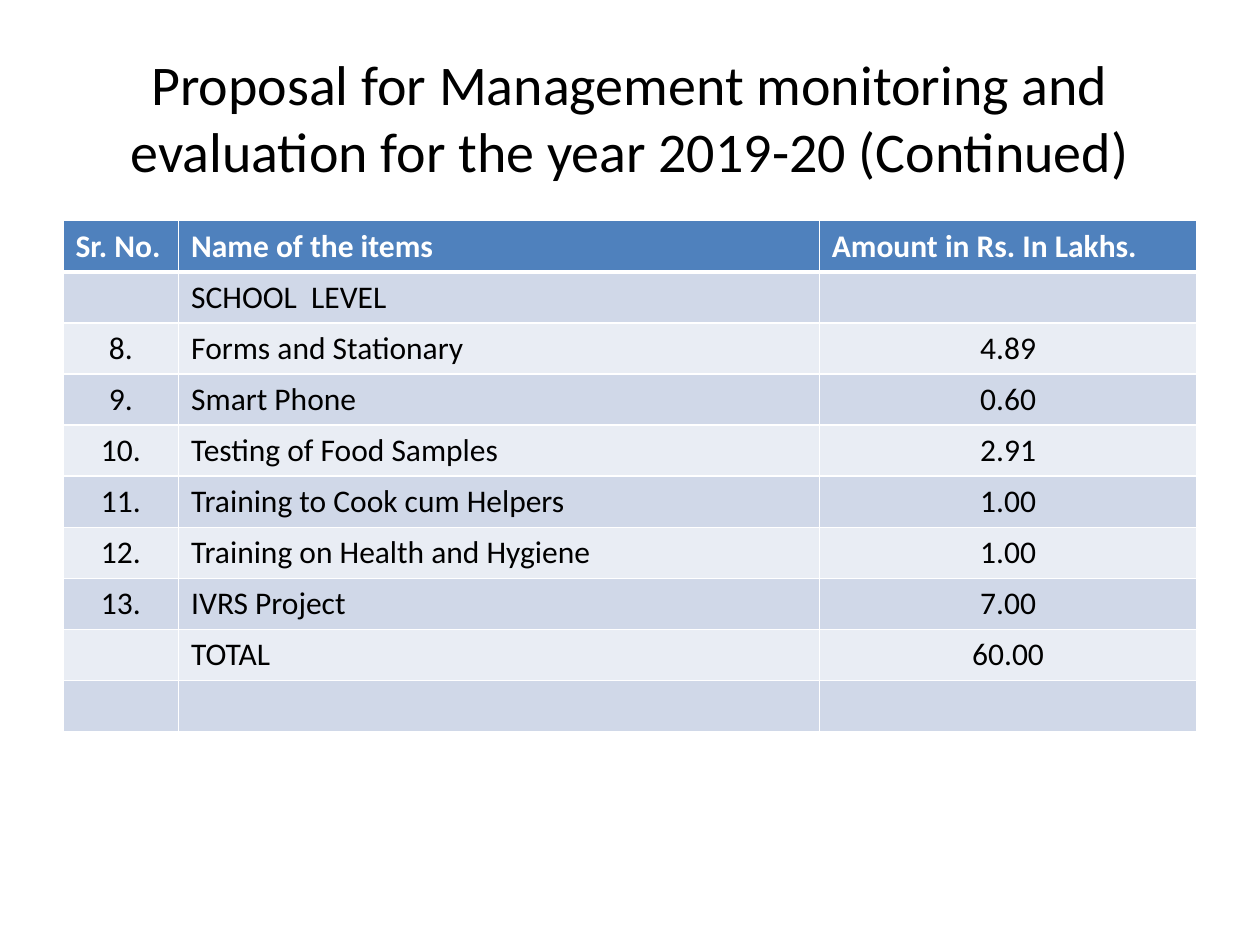
from dataclasses import dataclass

from lxml import etree
from pptx import Presentation
from pptx.dml.color import RGBColor
from pptx.enum.text import MSO_ANCHOR, PP_ALIGN
from pptx.oxml.ns import qn
from pptx.util import Cm, Pt

LEFT, CENTER = PP_ALIGN.LEFT, PP_ALIGN.CENTER
TOP, MIDDLE = MSO_ANCHOR.TOP, MSO_ANCHOR.MIDDLE
TITLE_ONLY = 5


@dataclass(frozen=True)
class Theme:
    font: str = "Calibri"
    title_size: int = 32
    table_size: int = 18
    text: str = "000000"
    header_text: str = "FFFFFF"
    header_fill: str = "4F81BD"
    bands: tuple = ("D0D8E8", "E9EDF4")
    rule: str = "FFFFFF"
    thin_rule: int = 1
    header_rule: int = 3


THEME = Theme()

TITLE = "Proposal for Management monitoring and evaluation for the year 2019-20 (Continued)"
HEADINGS = ("Sr. No.", "Name of the items", "Amount in Rs. In Lakhs.")
ITEMS = (
    ("", "SCHOOL  LEVEL", ""),
    ("8.", "Forms and Stationary", "4.89"),
    ("9.", "Smart Phone", "0.60"),
    ("10.", "Testing of Food Samples", "2.91"),
    ("11.", "Training to Cook cum Helpers", "1.00"),
    ("12.", "Training on Health and Hygiene", "1.00"),
    ("13.", "IVRS Project", "7.00"),
    ("", "TOTAL", "60.00"),
    ("", "", ""),
)
COLUMN_SHARES = (0.102, 0.565, 0.333)
ITEM_ALIGNMENTS = (CENTER, LEFT, CENTER)


def format_paragraph(paragraph, size, color, bold, alignment):
    paragraph.alignment = alignment
    for name, value in {"name": THEME.font, "size": Pt(size), "bold": bold}.items():
        setattr(paragraph.font, name, value)
    paragraph.font.color.rgb = RGBColor.from_string(color)


def add_borders(cell, top, bottom):
    """Rule all four sides; call before the cell is filled."""
    widths = {"a:lnL": THEME.thin_rule, "a:lnR": THEME.thin_rule,
              "a:lnT": top, "a:lnB": bottom}
    properties = cell._tc.get_or_add_tcPr()
    for side, width in widths.items():
        line = etree.SubElement(properties, qn(side), w=str(Pt(width)))
        fill = etree.SubElement(line, qn("a:solidFill"))
        etree.SubElement(fill, qn("a:srgbClr"), val=THEME.rule)


def place_title(slide, left, top, width, height):
    title = slide.shapes.title
    box = {"left": left, "top": top, "width": width, "height": height}
    for name, value in box.items():
        setattr(title, name, value)
    frame = title.text_frame
    frame.text = TITLE
    frame.word_wrap = True
    frame.vertical_anchor = MIDDLE
    format_paragraph(frame.paragraphs[0], THEME.title_size, THEME.text, False, CENTER)


def fill_row(cells, texts, alignments, fill, color, bold, top, bottom):
    for cell, text, alignment in zip(cells, texts, alignments):
        add_borders(cell, top, bottom)
        cell.fill.solid()
        cell.fill.fore_color.rgb = RGBColor.from_string(fill)
        cell.vertical_anchor = TOP
        cell.text = text
        format_paragraph(cell.text_frame.paragraphs[0], THEME.table_size,
                         color, bold, alignment)


def place_budget_table(slide, left, top, width, height):
    budget = slide.shapes.add_table(
        len(ITEMS) + 1, len(HEADINGS), left, top, width, height).table
    for column, share in zip(budget.columns, COLUMN_SHARES):
        column.width = int(width * share)
    header, *item_rows = budget.rows

    # Header row with a heavier rule below
    fill_row(header.cells, HEADINGS, (LEFT,) * len(HEADINGS), THEME.header_fill,
             THEME.header_text, True, THEME.thin_rule, THEME.header_rule)

    # Banded item rows
    for index, (row, item) in enumerate(zip(item_rows, ITEMS)):
        top_rule = THEME.thin_rule if index else THEME.header_rule
        fill_row(row.cells, item, ITEM_ALIGNMENTS,
                 THEME.bands[index % len(THEME.bands)], THEME.text, False,
                 top_rule, THEME.thin_rule)


def main():
    deck = Presentation()
    deck.slide_width, deck.slide_height = Cm(25.4), Cm(19.05)
    slide = deck.slides.add_slide(deck.slide_layouts[TITLE_ONLY])
    margin = Cm(1.27)
    content_width = deck.slide_width - 2 * margin
    place_title(slide, margin, Cm(0.76), content_width, Cm(3.18))
    place_budget_table(slide, margin, Cm(4.45), content_width, Cm(10.3))
    deck.save("out.pptx")


if __name__ == "__main__":
    main()
